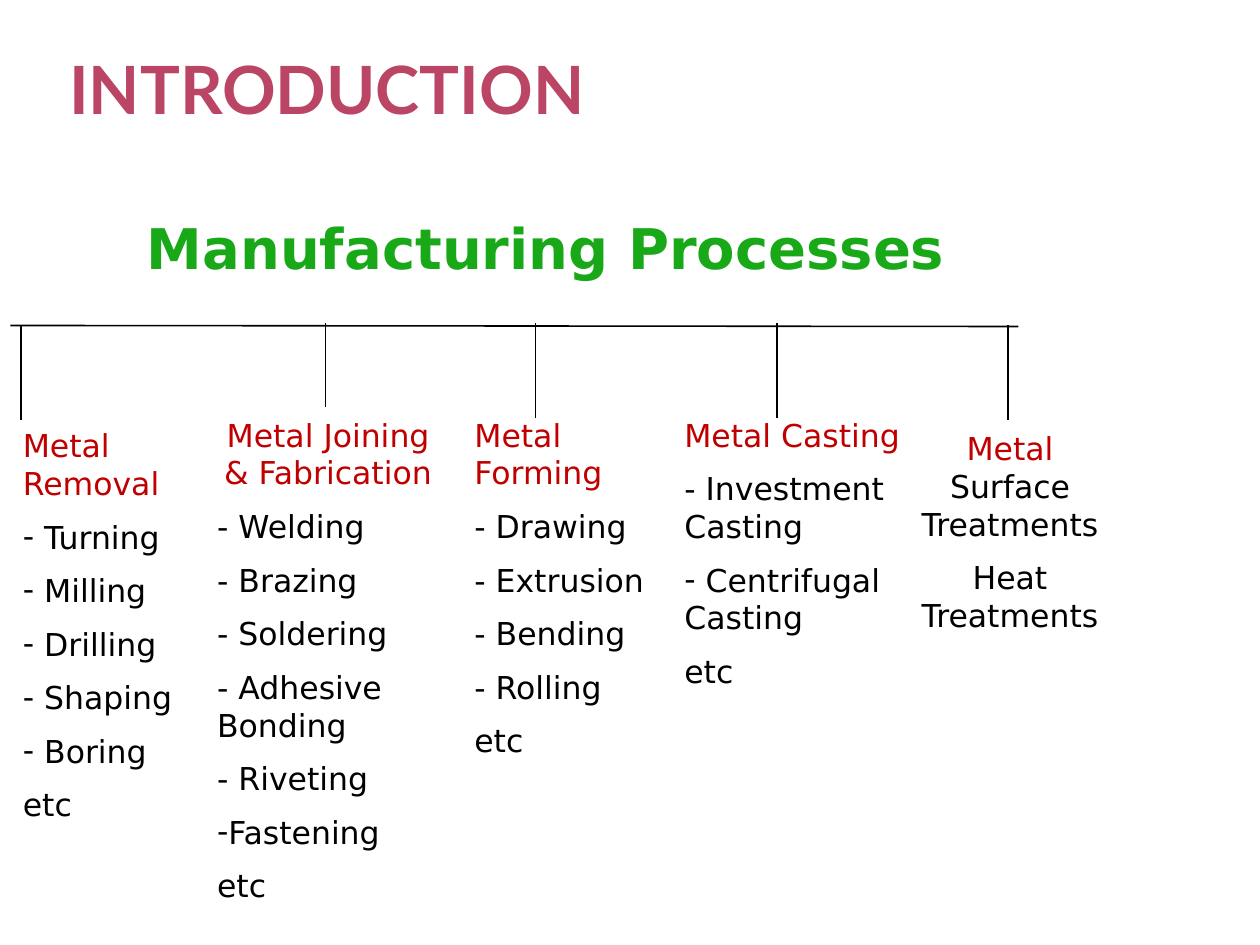
from typing import NamedTuple

from lxml import etree
from pptx import Presentation, util as u
from pptx.dml.color import RGBColor
from pptx.enum import shapes, text
from pptx.oxml.ns import qn

COLS, ROWS = 120, 90
HUES = {"title": "BA4565", "head": "18A818", "red": "C00000", "black": "000000"}
FONT = "DejaVu Sans"
LEFT, MID = text.PP_ALIGN.LEFT, text.PP_ALIGN.CENTER


class Run(NamedTuple):
    text: str
    hue: str = "black"


class Para(NamedTuple):
    runs: list[Run]
    align: text.PP_ALIGN = LEFT
    dash: bool = False


class Group(NamedTuple):
    stem: float
    top: float
    end: float
    box: tuple[float, float, float, float]
    paras: list[Para]


def head(words: str, align=LEFT) -> Para:
    return Para([Run(words, "red")], align)


def items(*words: str, dash: bool = False) -> list[Para]:
    return [Para([Run(word)], dash=dash) for word in words]


GROUPS = [
    Group(2, 31, 40, (1, 40, 18, 41.2), [
        head("Metal Removal"),
        *items(" Turning", " Milling", " Drilling", " Shaping", " Boring", dash=True),
        *items("etc")]),
    Group(31, 30.8, 38.8, (19.5, 39, 23.5, 55.7), [
        head("Metal Joining & Fabrication", MID),
        *items("- Welding", "- Brazing", "- Soldering", "- Adhesive Bonding", "- Riveting"),
        *items("Fastening", dash=True),
        *items("etc")]),
    Group(51, 30.8, 39.8, (44, 39, 21, 35.8), [
        head("Metal Forming"),
        *items("- Drawing", "- Extrusion", "- Bending", "- Rolling", "etc")]),
    Group(74, 30.8, 39.8, (64, 39, 23, 28.4), [
        head("Metal Casting"),
        *items("- Investment Casting"),
        *items(" Centrifugal Casting", dash=True),
        *items("etc")]),
    Group(96, 31, 40, (86, 40.3, 20.4, 26.6), [
        Para([Run("Metal ", "red"), Run("Surface Treatments")], MID),
        Para([Run("Heat Treatments")], MID)]),
]

deck = Presentation()
deck.slide_width, deck.slide_height = u.Inches(10), u.Inches(7.5)
slide = deck.slides.add_slide(deck.slide_layouts[5])


def across(col: float) -> int:
    return round(deck.slide_width * col / COLS)


def down(row: float) -> int:
    return round(deck.slide_height * row / ROWS)


def add_run(para, run: Run, size: float, font: str = FONT, bold: bool = False) -> None:
    part = para.add_run()
    part.text = run.text
    part.font.name, part.font.size, part.font.bold = font, u.Pt(size), bold
    part.font.color.rgb = RGBColor.from_string(HUES[run.hue])


def add_box(col: float, row: float, wide: float, high: float):
    box = slide.shapes.add_textbox(across(col), down(row), across(wide), down(high))
    box.text_frame.word_wrap = True
    return box.text_frame


def add_line(x1: float, y1: float, x2: float, y2: float, width: float = 0.75) -> None:
    line = slide.shapes.add_connector(
        shapes.MSO_CONNECTOR.STRAIGHT, across(x1), down(y1), across(x2), down(y2))
    line.line.width = u.Pt(width)
    line.line.color.rgb = RGBColor.from_string(HUES["black"])
    etree.SubElement(line._element.spPr, qn("a:effectLst"))


def add_dash(para) -> None:
    """Give the paragraph a hyphen bullet that sits flush with its text."""
    props = para._p.get_or_add_pPr()
    props.set("marL", "0")
    props.set("indent", "0")
    etree.SubElement(props, qn("a:buFont")).set("typeface", FONT)
    etree.SubElement(props, qn("a:buChar")).set("char", "-")


def add_list(group: Group) -> None:
    frame = add_box(*group.box)
    frame.auto_size = text.MSO_AUTO_SIZE.SHAPE_TO_FIT_TEXT
    for i, item in enumerate(group.paras):
        para = frame.add_paragraph() if i else frame.paragraphs[0]
        para.alignment = item.align
        if i:
            para.space_before = u.Pt(9)
        if item.dash:
            add_dash(para)
        for run in item.runs:
            add_run(para, run, 18)


title = slide.shapes.title
title.left, title.top = across(6), down(2)
title.width, title.height = across(95), down(10.2)
frame = title.text_frame
frame.vertical_anchor = text.MSO_ANCHOR.BOTTOM
frame.margin_left = frame.margin_right = u.Inches(0.05)
frame.margin_top = frame.margin_bottom = 0
frame.paragraphs[0].alignment = LEFT
add_run(frame.paragraphs[0], Run("INTRODUCTION", "title"), 38, "Lato", True)

frame = add_box(-3, 19, 110, 9)
frame.vertical_anchor = text.MSO_ANCHOR.MIDDLE
frame.paragraphs[0].alignment = MID
add_run(frame.paragraphs[0], Run("Manufacturing Processes", "head"), 32, bold=True)

for group in GROUPS:
    add_line(group.stem, group.top, group.stem, group.end)
    add_list(group)
add_line(1, 31, 97, 31.1, 0.9)

deck.save("out.pptx")
